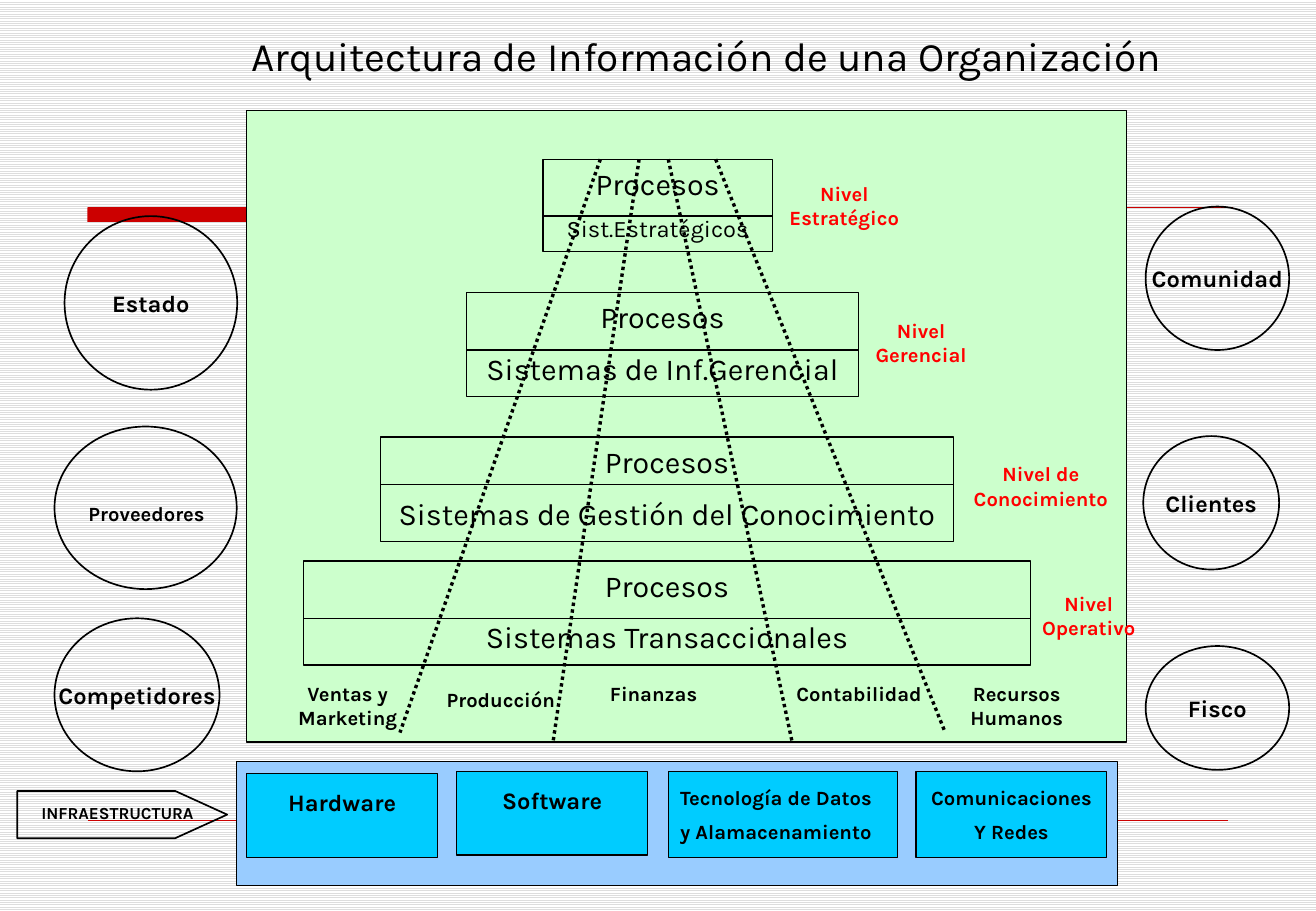
from typing import NamedTuple

from pptx import Presentation
from pptx.dml.color import RGBColor
from pptx.enum.dml import MSO_LINE, MSO_PATTERN
from pptx.enum.shapes import MSO_CONNECTOR, MSO_SHAPE
from pptx.enum.text import MSO_ANCHOR, PP_ALIGN
from pptx.oxml.ns import qn
from pptx.util import Cm, Pt
from lxml.etree import SubElement

FONT = "Karla"
BLACK, RED, RULE_RED = "000000", "FF0000", "CC0000"
GREEN, PALE_BLUE, CYAN = "CCFFCC", "99CCFF", "00CCFF"


class Box(NamedTuple):
    """Left, top, width and height in centimetres."""
    x: float
    y: float
    w: float
    h: float


class Label(NamedTuple):
    text: str
    box: Box
    size: float = 12
    bold: bool = True


class Level(NamedTuple):
    system: str
    system_size: float
    box: Box
    divider_y: float
    name: str
    name_box: Box


class Resource(NamedTuple):
    lines: list[str]
    box: Box
    size: float
    align: PP_ALIGN = PP_ALIGN.CENTER
    top_inset: float | None = None


class Actor(NamedTuple):
    name: str
    box: Box


class Divide(NamedTuple):
    """Dotted line between two functional areas."""
    x1: float
    y1: float
    x2: float
    y2: float


TITLE = Label("Arquitectura de Información de una Organización",
              Box(3.96, 0.53, 21.62, 1.27), 24, False)
DIVIDES = [
    Divide(12.55, 3.33, 8.36, 15.32),
    Divide(13.36, 3.33, 11.56, 15.52),
    Divide(13.97, 3.33, 16.56, 15.52),
    Divide(14.96, 3.33, 19.76, 15.32),
]
AREAS = [
    Label("Ventas y Marketing", Box(5.77, 14.12, 3, 1.27)),
    Label("Producción", Box(8.97, 14.25, 3, 0.76)),
    Label("Finanzas", Box(12.37, 14.12, 2.59, 0.76)),
    Label("Contabilidad", Box(16.36, 14.12, 3.2, 0.76)),
    Label("Recursos Humanos", Box(19.96, 14.12, 2.59, 1.27)),
]
LEVELS = [
    Level("Sistemas de Gestión del Conocimiento", 18, Box(7.95, 9.14, 11.99, 2.18), 10.13,
          "Nivel de Conocimiento", Box(19.96, 9.53, 3.6, 1.27)),
    Level("Sistemas Transaccionales", 18, Box(6.35, 11.73, 15.19, 2.18), 12.93,
          "Nivel Operativo", Box(21.16, 12.24, 3.2, 1.27)),
    Level("Sistemas de Inf.Gerencial", 18, Box(9.75, 6.12, 8.2, 2.18), 7.32,
          "Nivel Gerencial", Box(17.96, 6.53, 2.59, 1.27)),
    Level("Sist.Estratégicos", 14, Box(11.35, 3.33, 4.8, 1.93), 4.52,
          "Nivel Estratégico", Box(16.15, 3.66, 3, 1.27)),
]
RESOURCES = [
    Resource(["Hardware"], Box(5.16, 16.18, 3.99, 1.75), 14, top_inset=0.3),
    Resource(["Software"], Box(9.55, 16.13, 3.99, 1.75), 14, top_inset=0.3),
    Resource(["Tecnología de Datos", "y Alamacenamiento"],
             Box(13.97, 16.13, 4.8, 1.8), 12, PP_ALIGN.LEFT),
    Resource(["Comunicaciones", "Y Redes"], Box(19.15, 16.13, 3.99, 1.8), 12),
]
ACTORS = [
    Actor("Clientes", Box(23.9, 9.12, 2.84, 2.79)),
    Actor("Comunidad", Box(23.95, 4.32, 3, 3)),
    Actor("Estado", Box(1.35, 4.52, 3.61, 3.63)),
    Actor("Fisco", Box(23.95, 13.51, 3, 2.59)),
    Actor("Competidores", Box(1.14, 12.93, 3.45, 3.2)),
]
SUPPLIERS_BOX = Box(1.14, 8.92, 3.81, 3.4)
SUPPLIERS = Label("Proveedores", Box(0.97, 10.36, 4.19, 0.76))
INFRASTRUCTURE_BOX = Box(0.36, 16.54, 4.39, 0.99)
INFRASTRUCTURE = Label("INFRAESTRUCTURA", Box(0.36, 16.66, 4.19, 0.69), 10)


def rgb(color: str) -> RGBColor:
    return RGBColor.from_string(color)


def add_box(s, kind: MSO_SHAPE, box: Box, fill: str | None = None,
            line: str | None = BLACK, width: float = 0.75):
    sp = s.shapes.add_shape(kind, *map(Cm, box))
    sp.shadow.inherit = False
    if fill:
        sp.fill.solid()
        sp.fill.fore_color.rgb = rgb(fill)
    else:
        sp.fill.background()
    if line:
        sp.line.color.rgb = rgb(line)
        sp.line.width = Pt(width)
    else:
        sp.line.fill.background()
    return sp


def add_line(s, x1: float, y1: float, x2: float, y2: float,
             color: str = BLACK, width: float = 0.75):
    c = s.shapes.add_connector(MSO_CONNECTOR.STRAIGHT, Cm(x1), Cm(y1), Cm(x2), Cm(y2))
    c.line.color.rgb = rgb(color)
    c.line.width = Pt(width)
    SubElement(c._element.spPr, qn("a:effectLst"))
    return c


def write(sp, lines: list[str], sizes: list[float], bold: bool = True, color: str = BLACK,
          align: PP_ALIGN = PP_ALIGN.CENTER, anchor: MSO_ANCHOR = MSO_ANCHOR.TOP,
          wrap: bool = True) -> None:
    """Fill a shape with one paragraph per line, half a line apart."""
    tf = sp.text_frame
    tf.word_wrap = wrap
    tf.vertical_anchor = anchor
    for i, (text, size) in enumerate(zip(lines, sizes)):
        p = tf.add_paragraph() if i else tf.paragraphs[0]
        p.text = text
        p.alignment = align
        if i:
            p.space_before = Pt(size / 2)
        p.font.name = FONT
        p.font.size = Pt(size)
        p.font.bold = bold
        p.font.color.rgb = rgb(color)


def add_label(s, label: Label, color: str = BLACK) -> None:
    sp = s.shapes.add_textbox(*map(Cm, label.box))
    write(sp, [label.text], [label.size], label.bold, color)


def add_level(s, level: Level) -> None:
    box = level.box
    sp = add_box(s, MSO_SHAPE.RECTANGLE, box)
    write(sp, ["Procesos", level.system], [18, level.system_size], bold=False)
    add_label(s, Label(level.name, level.name_box), RED)
    add_line(s, box.x, level.divider_y, box.x + box.w, level.divider_y)


def add_resource(s, res: Resource) -> None:
    sp = add_box(s, MSO_SHAPE.RECTANGLE, res.box, CYAN)
    anchor = MSO_ANCHOR.MIDDLE
    if res.top_inset is not None:
        anchor = MSO_ANCHOR.TOP
        sp.text_frame.margin_top = Cm(res.top_inset)
    write(sp, res.lines, [res.size] * len(res.lines), align=res.align, anchor=anchor,
          wrap=res.align == PP_ALIGN.LEFT)


def main() -> None:
    prs = Presentation()
    prs.slide_width, prs.slide_height = Cm(27.51), Cm(19.05)
    s = prs.slides.add_slide(prs.slide_layouts[6])
    fill = s.background.fill
    fill.patterned()
    fill.pattern = MSO_PATTERN.LIGHT_HORIZONTAL
    fill.fore_color.rgb = rgb("DDDDDD")
    fill.back_color.rgb = rgb("FFFFFF")

    add_box(s, MSO_SHAPE.RECTANGLE, Box(1.83, 4.34, 14.02, 0.3), RULE_RED, None)
    add_line(s, 1.83, 4.34, 25.78, 4.34, RULE_RED)
    add_line(s, 1.83, 17.15, 25.68, 17.15, RULE_RED, 0.25)

    add_box(s, MSO_SHAPE.RECTANGLE, Box(5.16, 2.31, 18.39, 13.21), GREEN)
    for divide in DIVIDES:
        add_line(s, *divide, width=2).line.dash_style = MSO_LINE.ROUND_DOT
    for area in AREAS:
        add_label(s, area)
    for level in LEVELS:
        add_level(s, level)
    add_label(s, TITLE)

    add_box(s, MSO_SHAPE.RECTANGLE, Box(4.95, 15.93, 18.42, 2.59), PALE_BLUE)
    for res in RESOURCES:
        add_resource(s, res)
    add_label(s, INFRASTRUCTURE)
    arrow = add_box(s, MSO_SHAPE.PENTAGON, INFRASTRUCTURE_BOX, width=1)
    arrow.adjustments[0] = 1.1

    add_box(s, MSO_SHAPE.OVAL, SUPPLIERS_BOX, width=1)
    add_label(s, SUPPLIERS)
    for actor in ACTORS:
        sp = add_box(s, MSO_SHAPE.OVAL, actor.box, width=1)
        write(sp, [actor.name], [14], anchor=MSO_ANCHOR.MIDDLE, wrap=False)

    prs.save("out.pptx")


if __name__ == "__main__":
    main()
